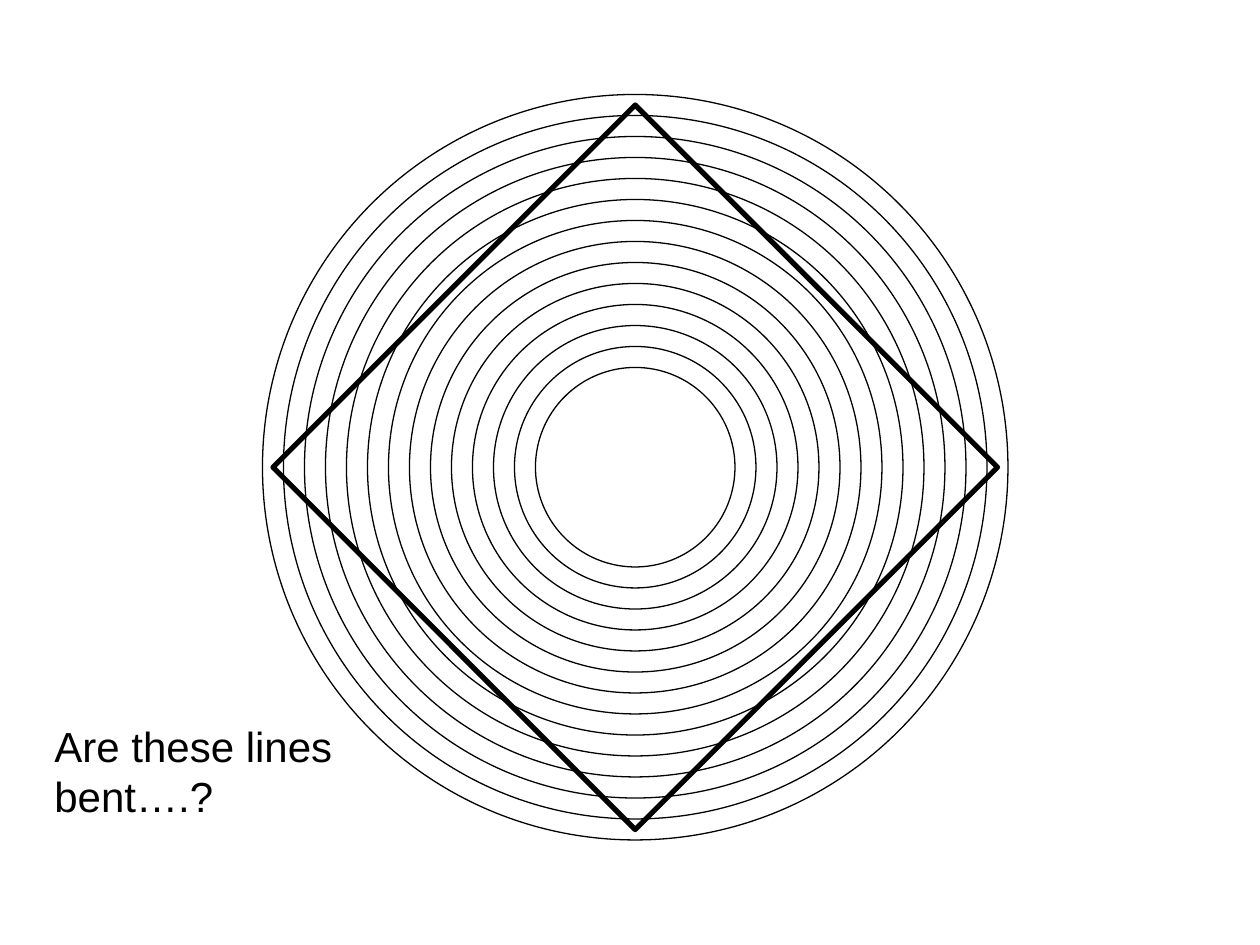
from pptx import Presentation
from pptx.dml.color import RGBColor
from pptx.enum.shapes import MSO_SHAPE
from pptx.enum.text import MSO_ANCHOR, MSO_AUTO_SIZE, PP_ALIGN
from pptx.util import Inches, Pt

OVAL, DIAMOND = MSO_SHAPE.OVAL, MSO_SHAPE.DIAMOND
TOP, LEFT = MSO_ANCHOR.TOP, PP_ALIGN.LEFT
FIT_SHAPE = MSO_AUTO_SIZE.SHAPE_TO_FIT_TEXT

THEME = {
    "ink": RGBColor(0, 0, 0),
    "font": "Arial",
    "text_size": Pt(24),
    "ring_line": Pt(0.75),
    "diamond_line": Pt(3),
}

# The grid has 24 cells to the inch
CELL = Inches(1) // 24
CENTRE_COLUMN, CENTRE_ROW = 121, 89
RING_COUNT, FIRST_RADIUS, RADIUS_STEP = 14, 19, 4
DIAMOND_RADIUS = 69

deck = Presentation()
deck.slide_width, deck.slide_height = Inches(10), Inches(7.5)
page = deck.slides.add_slide(deck.slide_layouts[6])


def add_centred_outline(kind, radius, line_width):
    outline = page.shapes.add_shape(
        kind,
        (CENTRE_COLUMN - radius) * CELL,
        (CENTRE_ROW - radius) * CELL,
        2 * radius * CELL,
        2 * radius * CELL,
    )
    outline.shadow.inherit = False
    outline.fill.background()
    outline.line.color.rgb = THEME["ink"]
    outline.line.width = line_width


# Concentric rings, from the smallest outwards
for ring in range(RING_COUNT):
    add_centred_outline(OVAL, FIRST_RADIUS + ring * RADIUS_STEP, THEME["ring_line"])

add_centred_outline(DIAMOND, DIAMOND_RADIUS, THEME["diamond_line"])

# Question at the lower left
question = page.shapes.add_textbox(8 * CELL, 136 * CELL, 64 * CELL, 22 * CELL)
frame_format = {"word_wrap": True, "auto_size": FIT_SHAPE, "vertical_anchor": TOP}
for name, value in frame_format.items():
    setattr(question.text_frame, name, value)

para = question.text_frame.paragraphs[0]
para.alignment = LEFT
span = para.add_run()
span.text = "Are these lines bent….?"
for name, value in {"name": THEME["font"], "size": THEME["text_size"]}.items():
    setattr(span.font, name, value)
span.font.color.rgb = THEME["ink"]

deck.save("out.pptx")
